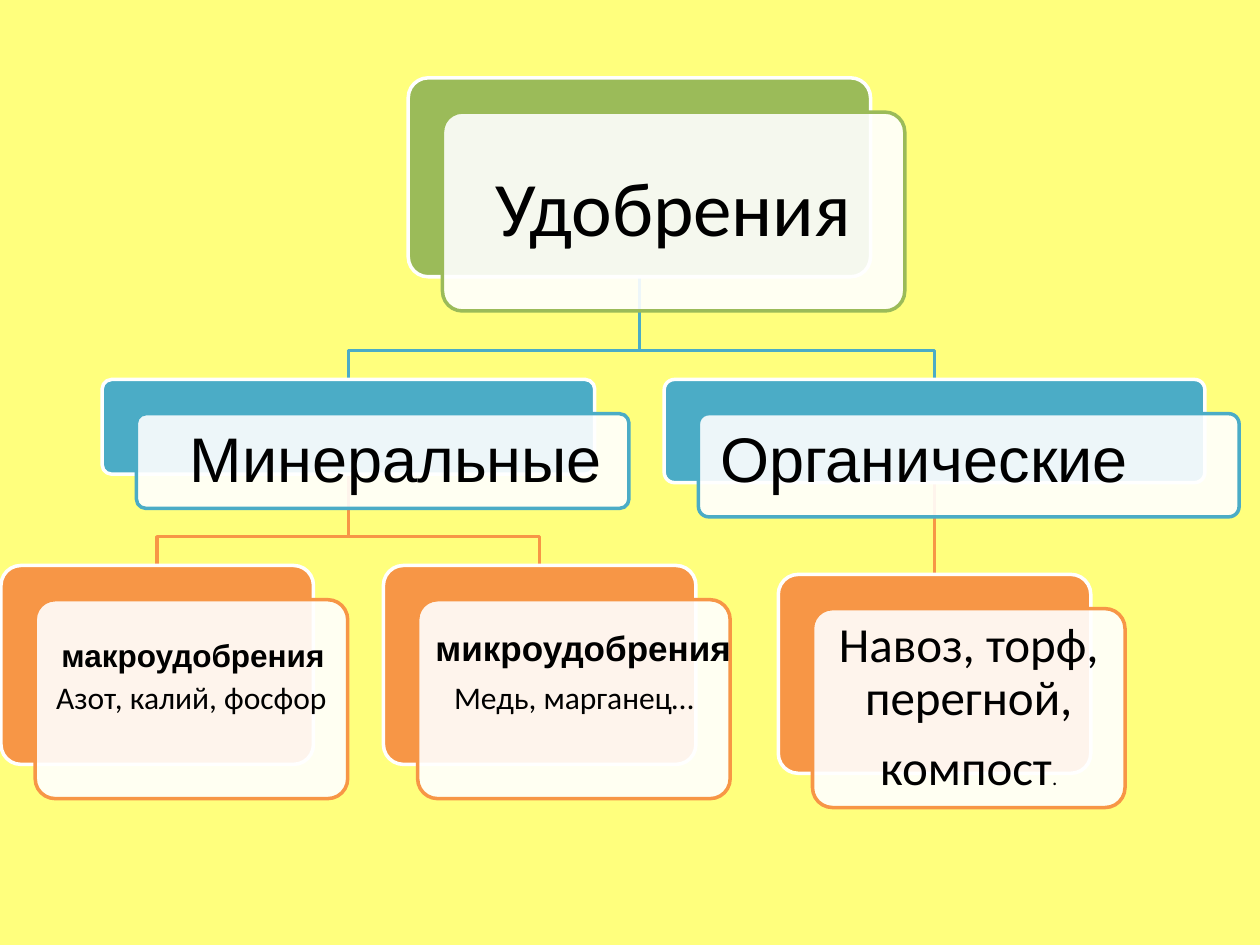
from dataclasses import dataclass

from lxml.etree import SubElement
from pptx import Presentation
from pptx.dml.color import RGBColor
from pptx.enum.shapes import MSO_CONNECTOR, MSO_SHAPE
from pptx.enum.text import MSO_ANCHOR, MSO_AUTO_SIZE, PP_ALIGN
from pptx.oxml.ns import qn
from pptx.util import Cm, Pt


@dataclass(frozen=True)
class Theme:
    background: str = "FFFF7D"
    white: str = "FFFFFF"
    ink: str = "000000"
    green: str = "9BBB59"
    blue: str = "4BACC6"
    orange: str = "F79646"
    body_font: str = "Calibri"
    caption_font: str = "Arial"
    title: int = 44
    branch: int = 36
    large: int = 28
    medium: int = 20
    small: int = 18
    tiny: int = 12
    line: int = 2


@dataclass(frozen=True)
class Card:
    left: float
    top: float
    width: float
    height: float
    colour: str

    @property
    def centre(self):
        return self.left + self.width / 2

    @property
    def bottom(self):
        return self.top + self.height


def write(para, text, *, font, size, colour, bold=False):
    span = para.add_run()
    span.text = text
    span.font.name = font
    span.font.size = Pt(size)
    span.font.bold = bold
    span.font.color.rgb = RGBColor.from_string(colour)


class Chart:
    """Draws the parts of a layered hierarchy on the current slide."""

    shift = 0.69
    inset = 0.12
    drop = 0.58

    def __init__(self, slide, theme):
        self.slide = slide
        self.theme = theme
        fill = slide.background.fill
        fill.solid()
        fill.fore_color.rgb = RGBColor.from_string(theme.background)

    def outline(self, shape, colour):
        shape.line.color.rgb = RGBColor.from_string(colour)
        shape.line.width = Pt(self.theme.line)

    def elbow(self, parent, child):
        turn = child.top - self.drop
        points = [(parent.centre, turn), (child.centre, turn), (child.centre, child.top)]
        builder = self.slide.shapes.build_freeform(Cm(parent.centre), Cm(parent.bottom))
        builder.add_line_segments([(Cm(x), Cm(y)) for x, y in points], close=False)
        shape = builder.convert_to_shape()
        shape.fill.background()
        shape.shadow.inherit = False
        self.outline(shape, child.colour)

    def straight(self, parent, child):
        x = Cm(parent.centre)
        line = self.slide.shapes.add_connector(
            MSO_CONNECTOR.STRAIGHT, x, Cm(parent.bottom), x, Cm(child.top))
        self.outline(line, child.colour)
        SubElement(line._element.spPr, qn("a:effectLst"))

    def panel(self, card, shift, fill, line, opacity=100):
        shape = self.slide.shapes.add_shape(
            MSO_SHAPE.ROUNDED_RECTANGLE, Cm(card.left + shift), Cm(card.top + shift),
            Cm(card.width), Cm(card.height))
        shape.adjustments[0] = 0.1
        shape.shadow.inherit = False
        shape.fill.solid()
        shape.fill.fore_color.rgb = RGBColor.from_string(fill)
        if opacity < 100:
            colour = shape.fill._xPr.find(qn("a:solidFill"))[0]
            SubElement(colour, qn("a:alpha")).set("val", str(opacity * 1000))
        self.outline(shape, line)

    def card(self, card):
        self.panel(card, 0, card.colour, self.theme.white)
        self.panel(card, self.shift, self.theme.white, card.colour, opacity=90)

    def box(self, left, top, width, height):
        box = self.slide.shapes.add_textbox(Cm(left), Cm(top), Cm(width), Cm(height))
        box.text_frame.word_wrap = True
        return box.text_frame

    def body(self, card, paragraphs, margin):
        offset = self.shift + self.inset
        frame = self.box(card.left + offset, card.top + offset,
                         card.width - 2 * self.inset, card.height - 2 * self.inset)
        frame.vertical_anchor = MSO_ANCHOR.MIDDLE
        frame.margin_left = frame.margin_right = Cm(margin)
        frame.margin_top = frame.margin_bottom = Cm(margin)
        for index, spans in enumerate(paragraphs):
            para = frame.add_paragraph() if index else frame.paragraphs[0]
            para.alignment = PP_ALIGN.CENTER
            para.line_spacing = 0.9
            para.space_after = Pt(round(spans[0][1] * 0.35))
            for text, size in spans:
                write(para, text, font=self.theme.body_font, size=size,
                      colour=self.theme.ink)

    def caption(self, text, place, size, bold=False):
        frame = self.box(*place)
        frame.auto_size = MSO_AUTO_SIZE.SHAPE_TO_FIT_TEXT
        write(frame.paragraphs[0], text, font=self.theme.caption_font, size=size,
              colour=self.theme.ink, bold=bold)


def main():
    theme = Theme()
    deck = Presentation()
    deck.slide_width, deck.slide_height = Cm(25.4), Cm(19.05)
    chart = Chart(deck.slides.add_slide(deck.slide_layouts[6]), theme)

    root = Card(8.23, 1.57, 9.32, 4.01, theme.green)
    mineral = Card(2.06, 7.65, 9.93, 1.91, theme.blue)
    organic = Card(13.39, 7.65, 10.9, 2.08, theme.blue)
    macro = Card(0.02, 11.4, 6.3, 4.01, theme.orange)
    micro = Card(7.73, 11.4, 6.3, 4.01, theme.orange)
    manure = Card(15.69, 11.58, 6.3, 4.01, theme.orange)

    chart.straight(organic, manure)
    for parent, child in ((root, organic), (mineral, micro),
                          (mineral, macro), (root, mineral)):
        chart.elbow(parent, child)
    for card in (root, mineral, macro, micro, organic, manure):
        chart.card(card)

    chart.body(root, [[("Удобрения", theme.title)]], 0.46)
    chart.body(macro, [[("Азот, калий, фосфор", theme.small)]], 0.18)
    chart.body(micro, [[("Медь, марганец…", theme.small)]], 0.18)
    chart.body(manure, [[("Навоз, торф, перегной,", theme.large)],
                        [("компост", theme.large), (".", theme.tiny)]], 0.3)

    chart.caption("Минеральные", (3.58, 8.33, 9.53, 1.8), theme.branch)
    chart.caption("Органические", (14.27, 8.33, 10.31, 1.8), theme.branch)
    chart.caption("макроудобрения", (0.99, 12.7, 6.15, 1.02), theme.small, bold=True)
    chart.caption("микроудобрения", (8.53, 12.5, 6.55, 1.12), theme.medium, bold=True)

    deck.save("out.pptx")


if __name__ == "__main__":
    main()
